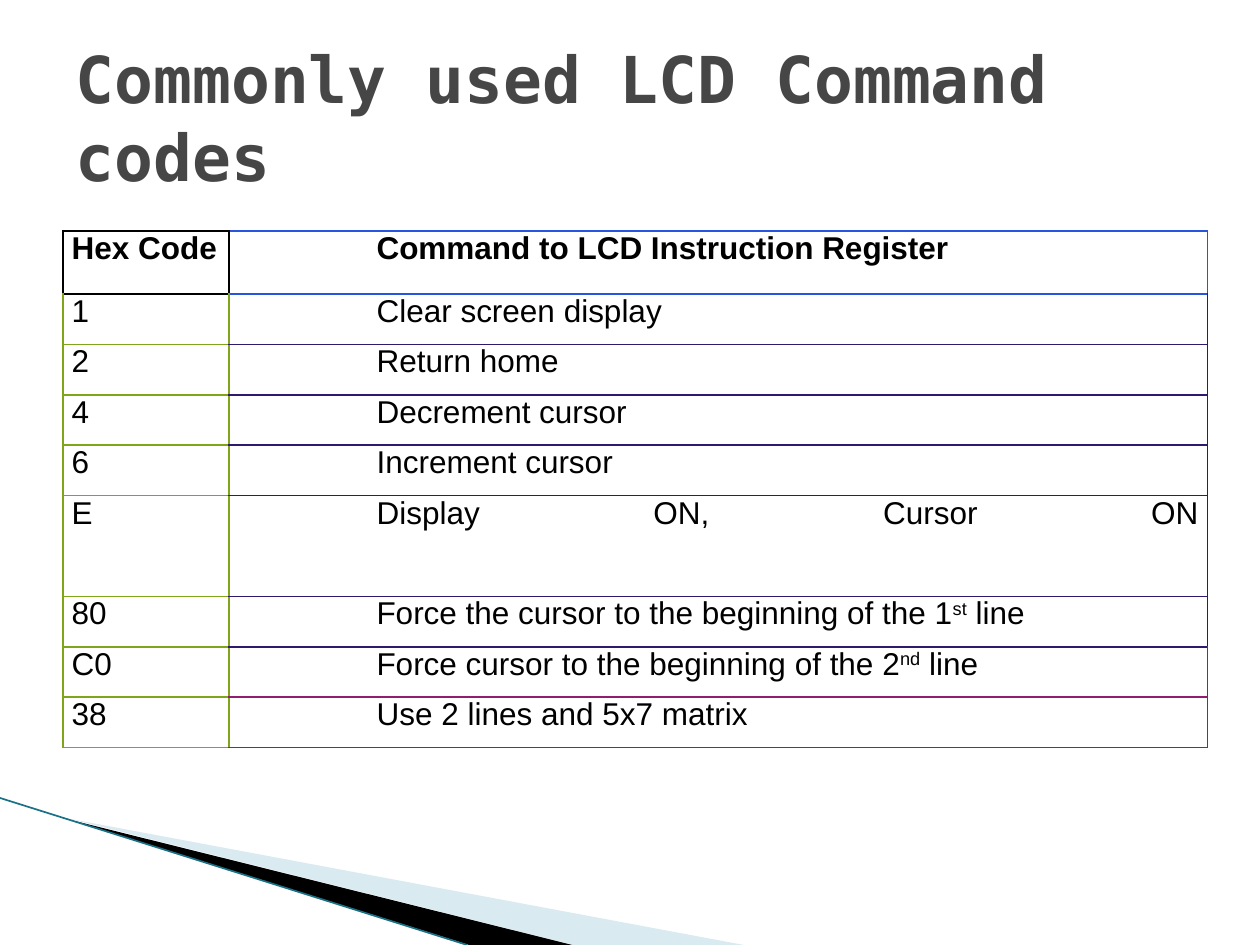
import dataclasses

import lxml.etree
import pptx
import pptx.dml.color
import pptx.enum.shapes
import pptx.enum.text
import pptx.oxml.ns
import pptx.util

Pt = pptx.util.Pt
qn = pptx.oxml.ns.qn

COLOURS = {
    "title": "464646", "text": "000000", "black": "000000", "green": "80A41A",
    "blue": "2855E0", "indigo": "30196D", "plum": "901D6D",
    "pale": "A0CBDC", "teal": "1A7085",
}


@dataclasses.dataclass(frozen=True)
class Command:
    code: str
    runs: tuple[str, ...]
    height: float = 28.8
    top: str = "indigo"
    side: str = "indigo"
    bold: bool = False
    code_border: str = "green"
    trailing_break: bool = False


@dataclasses.dataclass(frozen=True)
class Wedge:
    points: tuple[tuple[float, float], ...]
    colour: str
    alpha: int = 100


COMMANDS = (
    Command("Hex Code", ("Command to LCD Instruction Register",), 36,
            "blue", "blue", True, "black"),
    Command("1", ("Clear screen display",), top="blue"),
    Command("2", ("Return home",)),
    Command("4", ("Decrement cursor",)),
    Command("6", ("Increment cursor",)),
    Command("E", ("Display ON, Cursor ON",), 57.6, trailing_break=True),
    Command("80", ("Force the cursor to the beginning of the 1", "st", " line")),
    Command("C0", ("Force cursor to the beginning of the 2", "nd", " line"),
            side="plum"),
    Command("38", ("Use 2 lines and 5x7 matrix",), top="plum", side="plum"),
)

WEDGES = (
    Wedge(((39.5, 468.5), (425, 540), (328.5, 540), (39.5, 468)), "pale", 40),
    Wedge(((38, 467.5), (327, 540), (268, 540), (38.5, 468)), "black"),
)


def rgb(name: str) -> pptx.dml.color.RGBColor:
    return pptx.dml.color.RGBColor.from_string(COLOURS[name])


def style_font(font, name: str, size: float, colour: str, bold: bool) -> None:
    font.name = name
    font.size = Pt(size)
    font.bold = bold
    font.color.rgb = rgb(colour)


def draw_wedge(page, wedge: Wedge) -> None:
    builder = page.shapes.build_freeform(*wedge.points[0], scale=Pt(1))
    builder.add_line_segments(wedge.points[1:], close=True)
    shape = builder.convert_to_shape()
    shape.shadow.inherit = False
    shape.line.fill.background()
    shape.fill.solid()
    shape.fill.fore_color.rgb = rgb(wedge.colour)
    if wedge.alpha < 100:
        colour = shape.fill._xPr.find(".//" + qn("a:srgbClr"))
        lxml.etree.SubElement(colour, qn("a:alpha"), val=str(wedge.alpha * 1000))


def draw_edge(page) -> None:
    edge = page.shapes.add_connector(
        pptx.enum.shapes.MSO_CONNECTOR.STRAIGHT,
        Pt(0), Pt(456), Pt(267), Pt(540))
    edge.line.width = Pt(0.95)
    edge.line.color.rgb = rgb("teal")
    lxml.etree.SubElement(edge._element.spPr, qn("a:effectLst"))


def set_borders(cell, left: str, right: str, top: str, bottom: str) -> None:
    properties = cell._tc.get_or_add_tcPr()
    for side, colour in zip("LRTB", (left, right, top, bottom)):
        line = lxml.etree.SubElement(properties, qn(f"a:ln{side}"), w=str(Pt(1)))
        fill = lxml.etree.SubElement(line, qn("a:solidFill"))
        lxml.etree.SubElement(fill, qn("a:srgbClr"), val=COLOURS[colour])


def fill_cell(cell, runs: tuple[str, ...], bold: bool, indent: float = 0,
              trailing_break: bool = False) -> None:
    cell.fill.background()
    cell.margin_left = cell.margin_right = Pt(5)
    cell.margin_top = cell.margin_bottom = Pt(0)
    para = cell.text_frame.paragraphs[0]
    para.alignment = pptx.enum.text.PP_ALIGN.JUSTIFY
    para._p.get_or_add_pPr().set("marL", str(Pt(indent)))
    for index, text in enumerate(runs):
        span = para.add_run()
        span.text = text
        style_font(span.font, "Arial", 18, "text", bold)
        if index == 1:
            span.font._element.set("baseline", "30000")
    if trailing_break:
        para.add_line_break()
    style_font(para.font, "Arial", 18, "text", bold)


def draw_table(page) -> None:
    widths = (95, 559)
    height = sum(command.height for command in COMMANDS)
    table = page.shapes.add_table(
        len(COMMANDS), len(widths), Pt(36), Pt(132), Pt(sum(widths)),
        Pt(height)).table
    table.first_row = table.horz_banding = False
    for column, width in zip(table.columns, widths):
        column.width = Pt(width)
    for index, command in enumerate(COMMANDS):
        table.rows[index].height = Pt(command.height)
        code, meaning = table.cell(index, 0), table.cell(index, 1)
        border = command.code_border
        code_top = COMMANDS[max(index - 1, 0)].code_border
        set_borders(code, border, border, code_top, border)
        set_borders(meaning, border, command.side, command.top, command.side)
        fill_cell(code, (command.code,), command.bold)
        fill_cell(meaning, command.runs, command.bold, 79.2,
                  command.trailing_break)


def set_title(page, text: str) -> None:
    box = page.shapes.title
    box.left, box.top, box.width, box.height = Pt(36), Pt(21.6), Pt(648), Pt(90)
    frame = box.text_frame
    frame.word_wrap = True
    frame.auto_size = pptx.enum.text.MSO_AUTO_SIZE.NONE
    frame.vertical_anchor = pptx.enum.text.MSO_ANCHOR.MIDDLE
    para = frame.paragraphs[0]
    para.alignment = pptx.enum.text.PP_ALIGN.LEFT
    span = para.add_run()
    span.text = text
    style_font(span.font, "DejaVu Sans Mono", 36.9, "title", True)


def main() -> None:
    deck = pptx.Presentation()
    deck.slide_width, deck.slide_height = Pt(720), Pt(540)
    page = deck.slides.add_slide(deck.slide_layouts.get_by_name("Title Only"))
    set_title(page, "Commonly used LCD Command codes")
    for wedge in WEDGES:
        draw_wedge(page, wedge)
    draw_edge(page)
    draw_table(page)
    deck.save("out.pptx")


if __name__ == "__main__":
    main()
